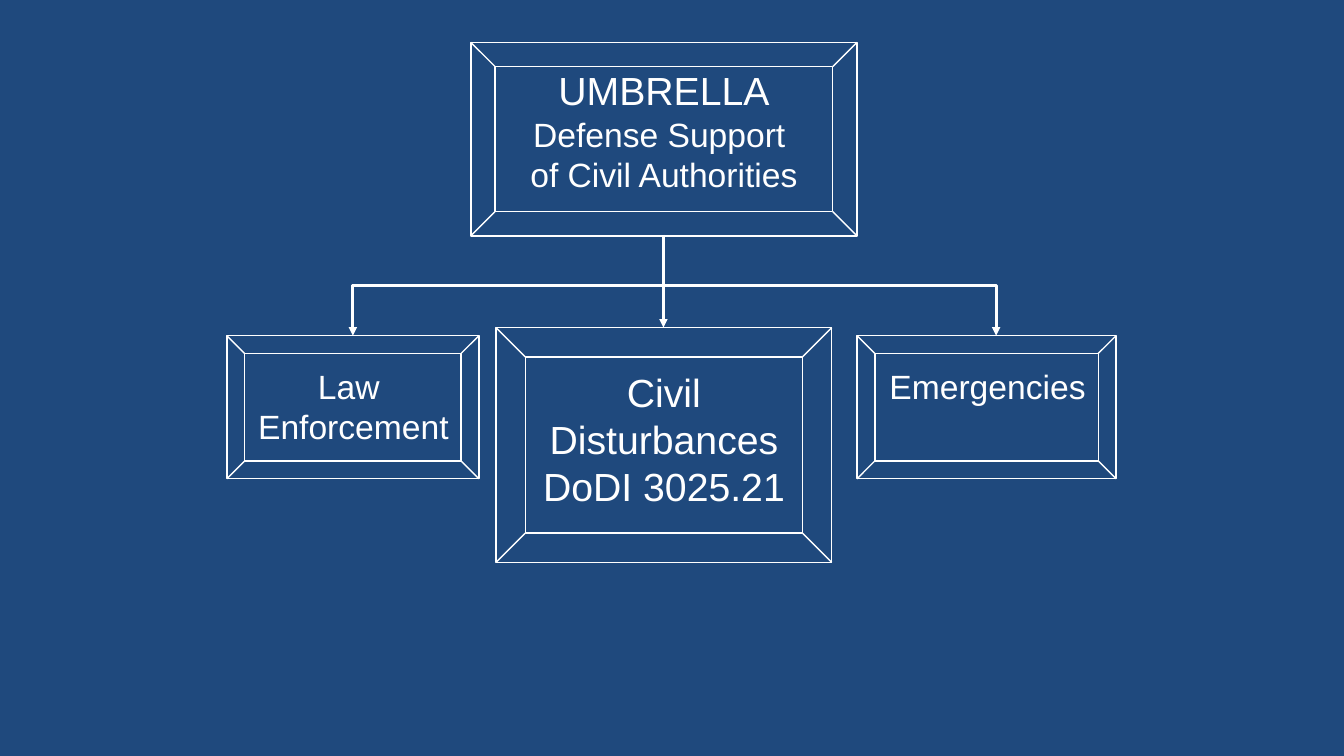
from dataclasses import dataclass

import pptx
import pptx.dml.color
import pptx.enum.shapes
import pptx.enum.text
import pptx.oxml
import pptx.oxml.ns
import pptx.util

Inches = pptx.util.Inches
Pt = pptx.util.Pt
RGBColor = pptx.dml.color.RGBColor
MSO_CONNECTOR = pptx.enum.shapes.MSO_CONNECTOR
qn = pptx.oxml.ns.qn


@dataclass(frozen=True)
class Theme:
    background: RGBColor = RGBColor(0x1F, 0x49, 0x7D)
    ink: RGBColor = RGBColor(0xFF, 0xFF, 0xFF)
    font: str = "Arial"
    large: int = 28
    medium: int = 24
    outline: float = 1
    connector: float = 2


THEME = Theme()


@dataclass(frozen=True)
class Area:
    left: float
    top: float
    width: float
    height: float

    def lengths(self) -> list[pptx.util.Length]:
        return [Inches(v) for v in (self.left, self.top, self.width, self.height)]


@dataclass(frozen=True)
class Line:
    text: str
    size: int = THEME.medium


@dataclass(frozen=True)
class Box:
    frame: Area
    label: Area
    lines: tuple[Line, ...]


BOXES = (
    Box(Area(4.67, 0.42, 3.83, 1.92), Area(5.1, 0.61, 2.97, 1.38),
        (Line("UMBRELLA", THEME.large), Line("Defense Support "), Line("of Civil Authorities"))),
    Box(Area(2.25, 3.33, 2.5, 1.42), Area(2.45, 3.58, 2.11, 0.91),
        (Line("Law "), Line("Enforcement"))),
    Box(Area(4.92, 3.25, 3.33, 2.33), Area(5.27, 3.6, 2.63, 1.52),
        (Line("Civil", THEME.large), Line("Disturbances", THEME.large),
         Line("DoDI 3025.21", THEME.large))),
    Box(Area(8.5, 3.33, 2.57, 1.42), Area(8.71, 3.58, 2.17, 0.51),
        (Line("Emergencies"),)),
)

TRUNK_X, TRUNK_TOP, BRANCH_Y, CIVIL_TOP, SIDE_TOP = 6.58, 2.33, 2.83, 3.25, 3.33
SIDE_CENTRES = (3.5, 9.88)


def add_box(s: pptx.slide.Slide, box: Box) -> None:
    group = s.shapes.add_group_shape()
    sp = group.shapes.add_shape(pptx.enum.shapes.MSO_SHAPE.BEVEL, *box.frame.lengths())
    sp.shadow.inherit = False
    sp.fill.background()
    sp.line.color.rgb = THEME.ink
    sp.line.width = Pt(THEME.outline)
    tf = group.shapes.add_textbox(*box.label.lengths()).text_frame
    tf.word_wrap = False
    tf.auto_size = pptx.enum.text.MSO_AUTO_SIZE.SHAPE_TO_FIT_TEXT
    for i, line in enumerate(box.lines):
        p = tf.add_paragraph() if i else tf.paragraphs[0]
        p.alignment = pptx.enum.text.PP_ALIGN.CENTER
        r = p.add_run()
        r.text = line.text
        r.font.name = THEME.font
        r.font.size = Pt(line.size)
        r.font.color.rgb = THEME.ink


def add_arrow(s: pptx.slide.Slide, kind: MSO_CONNECTOR, x1: float, y1: float,
              x2: float, y2: float) -> pptx.shapes.connector.Connector:
    c = s.shapes.add_connector(kind, Inches(x1), Inches(y1), Inches(x2), Inches(y2))
    c.line.color.rgb = THEME.ink
    c.line.width = Pt(THEME.connector)
    props = c._element.spPr
    tail = pptx.oxml.parse_xml(f'<a:tailEnd {pptx.oxml.ns.nsdecls("a")} type="triangle"/>')
    props.find(qn("a:ln")).append(tail)
    props.append(pptx.oxml.parse_xml(f'<a:effectLst {pptx.oxml.ns.nsdecls("a")}/>'))
    return c


def add_branch(s: pptx.slide.Slide, x1: float, y1: float, x2: float, y2: float) -> None:
    mid_x, mid_y = (x1 + x2) / 2, (y1 + y2) / 2
    half_w, half_h = (y2 - y1) / 2, abs(x2 - x1) / 2
    to_right = x2 > x1
    side = half_w if to_right else -half_w
    c = add_arrow(s, MSO_CONNECTOR.ELBOW, mid_x + side, mid_y - half_h,
                  mid_x - side, mid_y + half_h)
    degrees = 270 if to_right else 90
    c._element.spPr.find(qn("a:xfrm")).set("rot", str(degrees * 60000))


def main() -> None:
    prs = pptx.Presentation()
    prs.slide_width, prs.slide_height = Inches(13.33), Inches(7.5)
    s = prs.slides.add_slide(prs.slide_layouts[6])
    s.background.fill.solid()
    s.background.fill.fore_color.rgb = THEME.background
    for box in BOXES:
        add_box(s, box)
    for x in SIDE_CENTRES:
        add_branch(s, TRUNK_X, TRUNK_TOP, x, SIDE_TOP)
    add_arrow(s, MSO_CONNECTOR.STRAIGHT, TRUNK_X, BRANCH_Y, TRUNK_X, CIVIL_TOP)
    prs.save("out.pptx")


if __name__ == "__main__":
    main()
